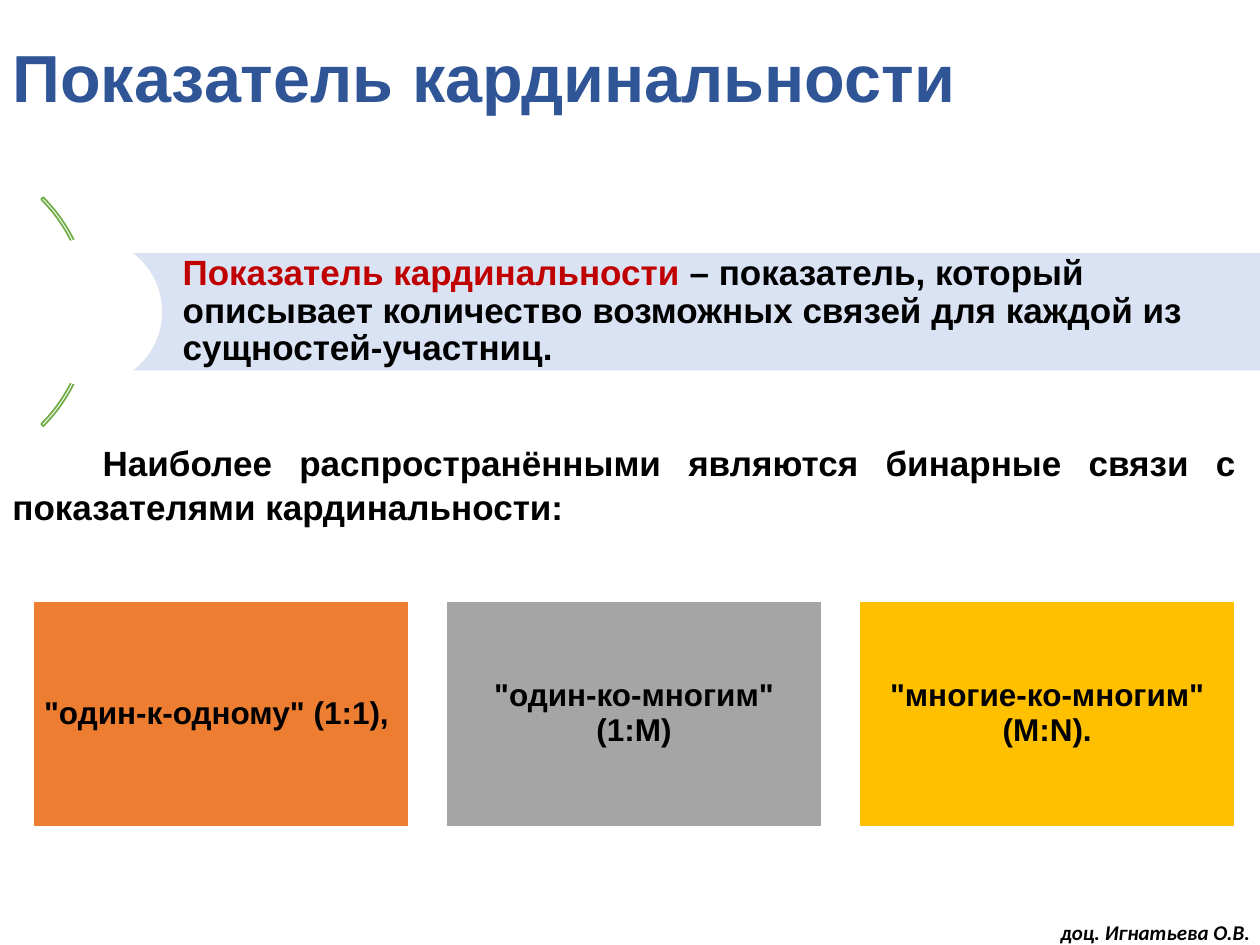
from dataclasses import dataclass

from pptx import Presentation
from pptx.dml.color import RGBColor
from pptx.enum.shapes import MSO_SHAPE as Preset
from pptx.enum.text import MSO_ANCHOR as Anchor, PP_ALIGN as Align
from pptx.util import Pt

COLORS = {
    "title": "2F5597",
    "text": "000000",
    "term": "C00000",
    "white": "FFFFFF",
    "arc": "70AD47",
    "band": "DAE3F3",
    "orange": "ED7D31",
    "gray": "A5A5A5",
    "gold": "FFC000",
}
CARD_LEFT, CARD_TOP = 18.9, 343.5
CARD_WIDTH, CARD_HEIGHT, CARD_GAP = 214.6, 128.8, 21.5


@dataclass(frozen=True)
class Box:
    left: float
    top: float
    width: float
    height: float

    def lengths(self) -> tuple:
        return Pt(self.left), Pt(self.top), Pt(self.width), Pt(self.height)


@dataclass(frozen=True)
class Span:
    text: str
    size: float
    color: str = "text"
    font: str = "Arial"
    italic: bool = False


@dataclass(frozen=True)
class Card:
    text: str
    color: str


CARDS = [
    Card('"один-к-одному" (1:1), ', "orange"),
    Card('"один-ко-многим" (1:М)', "gray"),
    Card('"многие-ко-многим" (M:N).', "gold"),
]


def rgb(name: str) -> RGBColor:
    return RGBColor.from_string(COLORS[name])


def add_preset(page, preset, box: Box, fill: str = "", line: str = ""):
    """Add a preset shape; an empty colour name means no fill or no line."""
    shape = page.shapes.add_shape(preset, *box.lengths())
    shape.shadow.inherit = False
    if fill:
        shape.fill.solid()
        shape.fill.fore_color.rgb = rgb(fill)
    else:
        shape.fill.background()
    if line:
        shape.line.color.rgb = rgb(line)
        shape.line.width = Pt(1)
    else:
        shape.line.fill.background()
    return shape


def write(shape, spans: list[Span], align=Align.LEFT, anchor=Anchor.TOP,
          spacing: float = 1.0, insets=(7.2, 3.6, 7.2, 3.6), wrap: bool = True):
    """Fill the shape with one paragraph; insets run left, top, right, bottom."""
    frame = shape.text_frame
    frame.word_wrap = wrap
    frame.vertical_anchor = anchor
    (frame.margin_left, frame.margin_top,
     frame.margin_right, frame.margin_bottom) = map(Pt, insets)
    para = frame.paragraphs[0]
    para.alignment = align
    para.line_spacing = spacing
    for span in spans:
        run = para.add_run()
        run.text = span.text
        run.font.name = span.font
        run.font.size = Pt(span.size)
        run.font.bold = True
        run.font.italic = span.italic
        run.font.color.rgb = rgb(span.color)
    return para


def add_text(page, box: Box, spans: list[Span], **layout):
    return write(page.shapes.add_textbox(*box.lengths()), spans, **layout)


def add_definition(page) -> None:
    arc = add_preset(page, Preset.BLOCK_ARC, Box(-133.2, 85.7, 185, 185), line="arc")
    # Angles from 315 to 45 degrees, then the ring thickness
    for index, value in enumerate((189, 27, 0.009)):
        arc.adjustments[index] = value
    band = add_preset(page, Preset.RECTANGLE, Box(50.4, 144.7, 669.6, 67), "band")
    write(band, [
        Span("Показатель кардинальности ", 20, "term"),
        Span("– показатель, который описывает количество возможных связей "
             "для каждой из сущностей-участниц.", 20),
    ], anchor=Anchor.MIDDLE, spacing=0.9, insets=(54, 4.3, 4.3, 4.3))
    add_preset(page, Preset.OVAL, Box(8.6, 136.2, 84, 84), "white")


def add_cards(page) -> None:
    for index, card in enumerate(CARDS):
        left = CARD_LEFT + index * (CARD_WIDTH + CARD_GAP)
        shape = add_preset(page, Preset.RECTANGLE,
                           Box(left, CARD_TOP, CARD_WIDTH, CARD_HEIGHT),
                           card.color, "white")
        write(shape, [Span(card.text, 18)], align=Align.CENTER,
              anchor=Anchor.MIDDLE, spacing=0.9, insets=(5, 5, 5, 5))


def main() -> None:
    deck = Presentation()
    deck.slide_width, deck.slide_height = Pt(720), Pt(540)
    page = deck.slides.add_slide(deck.slide_layouts[6])

    add_text(page, Box(0, 7.9, 720, 77),
             [Span("Показатель кардинальности", 38, "title")],
             anchor=Anchor.MIDDLE, spacing=0.9)
    intro = add_text(page, Box(0, 247.7, 713.5, 59.8),
                     [Span(" Наиболее распространёнными являются бинарные связи "
                           "с показателями кардинальности:", 20)],
                     align=Align.JUSTIFY, spacing=1.05)
    properties = intro._p.get_or_add_pPr()
    properties.set("marL", "0")
    properties.set("indent", str(Pt(36)))
    add_text(page, Box(599, 522, 124.6, 21.6),
             [Span("доц. Игнатьева О.В.", 12, font="Calibri", italic=True)],
             wrap=False)
    add_definition(page)
    add_cards(page)
    deck.save("out.pptx")


if __name__ == "__main__":
    main()
